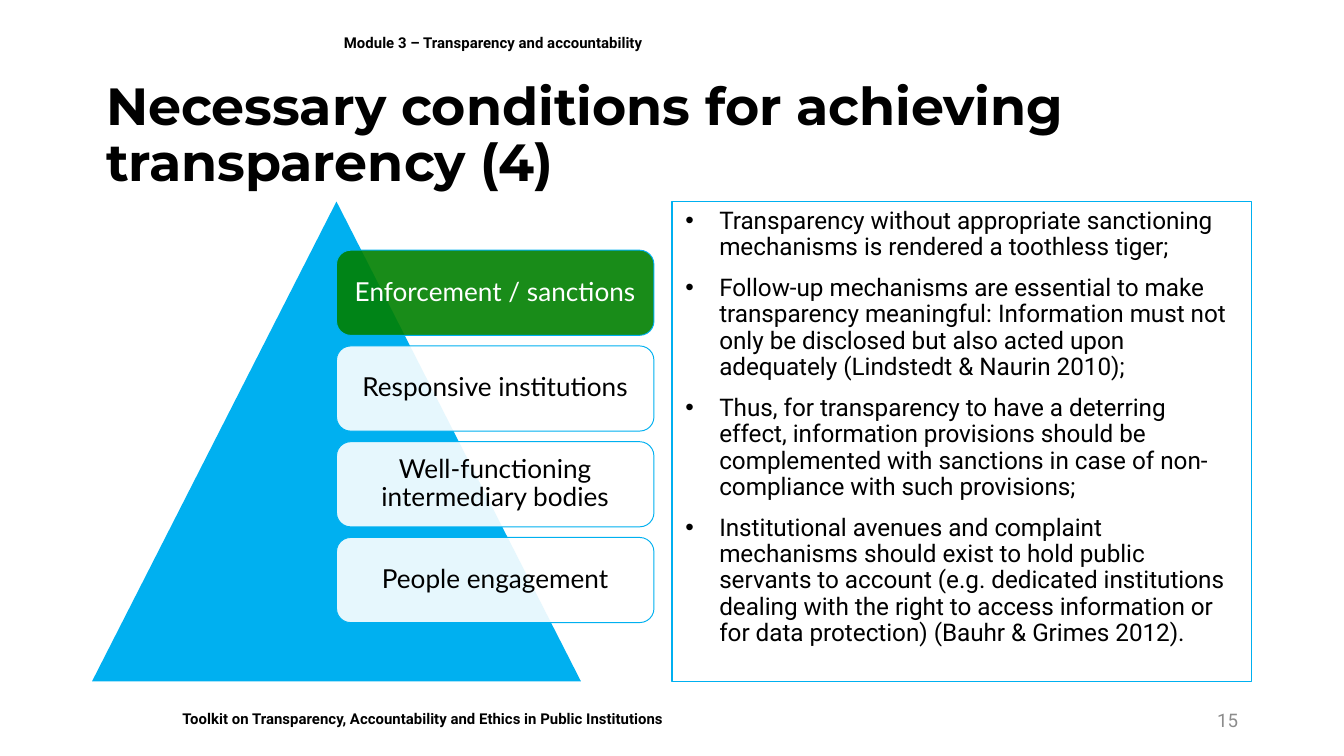
from pptx import Presentation
from pptx.dml.color import RGBColor
from pptx.enum.shapes import MSO_SHAPE
from pptx.enum.text import MSO_ANCHOR, MSO_AUTO_SIZE, PP_ALIGN
from pptx.oxml.ns import qn
from pptx.util import Cm, Pt
from lxml import etree

TRIANGLE, ROUNDED = MSO_SHAPE.ISOSCELES_TRIANGLE, MSO_SHAPE.ROUNDED_RECTANGLE
TOP, MIDDLE = MSO_ANCHOR.TOP, MSO_ANCHOR.MIDDLE
LEFT, CENTER, RIGHT = PP_ALIGN.LEFT, PP_ALIGN.CENTER, PP_ALIGN.RIGHT
NO_AUTOFIT = MSO_AUTO_SIZE.NONE
BLUE, GREEN, WHITE, BLACK, GREY = "00B0F0", "008000", "FFFFFF", "000000", "8C8C8C"


def color(value):
    return RGBColor.from_string(value)


def write(shape, texts, font, text_color=BLACK, anchor=MIDDLE, gap=0, **paragraph_format):
    """Fill a shape with one formatted paragraph per text."""
    frame = shape.text_frame
    frame.auto_size = NO_AUTOFIT
    frame.word_wrap = True
    frame.vertical_anchor = anchor
    for index, text in enumerate(texts):
        paragraph = frame.paragraphs[0] if index == 0 else frame.add_paragraph()
        paragraph.space_before = Pt(gap if index else 0)
        for name, value in paragraph_format.items():
            setattr(paragraph, name, value)
        run = paragraph.add_run()
        run.text = text
        for name, value in font.items():
            setattr(run.font, name, value)
        run.font.color.rgb = color(text_color)


prs = Presentation()
prs.slide_width, prs.slide_height = Cm(25.4), Cm(14.29)
slide = prs.slides.add_slide(prs.slide_layouts[1])
shapes = slide.shapes
small_bold = {"name": "Roboto", "size": Pt(8), "bold": True}

# Title
title = shapes.title
title.left, title.top, title.width, title.height = Cm(1.75), Cm(1.63), Cm(21.9), Cm(1.9)
write(title, ["Necessary conditions for achieving transparency (4)"],
      {"name": "Montserrat", "size": Pt(28), "bold": True},
      alignment=LEFT, line_spacing=0.9)

# Bulleted explanation in a thin frame
points = slide.placeholders[1]
points.left, points.top, points.width, points.height = Cm(12.7), Cm(3.81), Cm(10.95), Cm(9.07)
points.line.color.rgb = color(BLUE)
points.line.width = Pt(0.75)
write(points, [
    "Transparency without appropriate sanctioning mechanisms is rendered a toothless tiger;",
    "Follow-up mechanisms are essential to make transparency meaningful: Information must not "
    "only be disclosed but also acted upon adequately (Lindstedt & Naurin 2010);",
    "Thus, for transparency to have a deterring effect, information provisions should be "
    "complemented with sanctions in case of non-compliance with such provisions;",
    "Institutional avenues and complaint mechanisms should exist to hold public servants to "
    "account (e.g. dedicated institutions dealing with the right to access information or for "
    "data protection) (Bauhr & Grimes 2012).",
], {"name": "Roboto", "size": Pt(13)}, anchor=TOP, gap=8, alignment=LEFT, line_spacing=0.9)
for paragraph in points.text_frame.paragraphs:
    properties = paragraph._p.get_or_add_pPr()
    properties.set("marL", str(Cm(0.64)))
    properties.set("indent", str(-Cm(0.64)))

# Module header, toolkit footer and page number
header = shapes.add_textbox(Cm(6.25), Cm(0.25), Cm(17.4), Cm(1.12))
write(header, ["Module 3 – Transparency and accountability"], small_bold)

footer = shapes.add_textbox(Cm(3.2), Cm(13.28), Cm(18.21), Cm(0.8))
write(footer, ["Toolkit on Transparency, Accountability and Ethics in Public Institutions"],
      small_bold, anchor=TOP)

page_number = shapes.add_textbox(Cm(17.93), Cm(13.23), Cm(5.72), Cm(0.76))
write(page_number, ["15"], {"name": "Roboto", "size": Pt(10)}, GREY, alignment=RIGHT)

# Pyramid
pyramid = shapes.add_shape(TRIANGLE, Cm(1.74), Cm(3.81), Cm(9.24), Cm(9.07))
pyramid.shadow.inherit = False
pyramid.fill.solid()
pyramid.fill.fore_color.rgb = color(BLUE)
pyramid.line.fill.background()

# Conditions stacked over the pyramid, the first one highlighted
conditions = [
    ("Enforcement / sanctions", GREEN, WHITE),
    ("Responsive institutions", WHITE, BLACK),
    ("Well-functioning intermediary bodies", WHITE, BLACK),
    ("People engagement", WHITE, BLACK),
]
for row, (label, fill_color, text_color) in enumerate(conditions):
    condition = shapes.add_shape(ROUNDED, Cm(6.36), Cm(4.73 + 1.81 * row), Cm(6), Cm(1.61))
    condition.shadow.inherit = False
    condition.fill.solid()
    condition.fill.fore_color.rgb = color(fill_color)
    fill_element = condition._element.spPr.find(qn("a:solidFill"))
    etree.SubElement(fill_element[0], qn("a:alpha"), val="90000")
    condition.line.color.rgb = color(BLUE)
    condition.line.width = Pt(0.5)
    for side in ("left", "top", "right", "bottom"):
        setattr(condition.text_frame, f"margin_{side}", Cm(0.15))
    write(condition, [label], {"name": "Lato", "size": Pt(14)}, text_color,
          alignment=CENTER, line_spacing=0.9)

prs.save("out.pptx")
